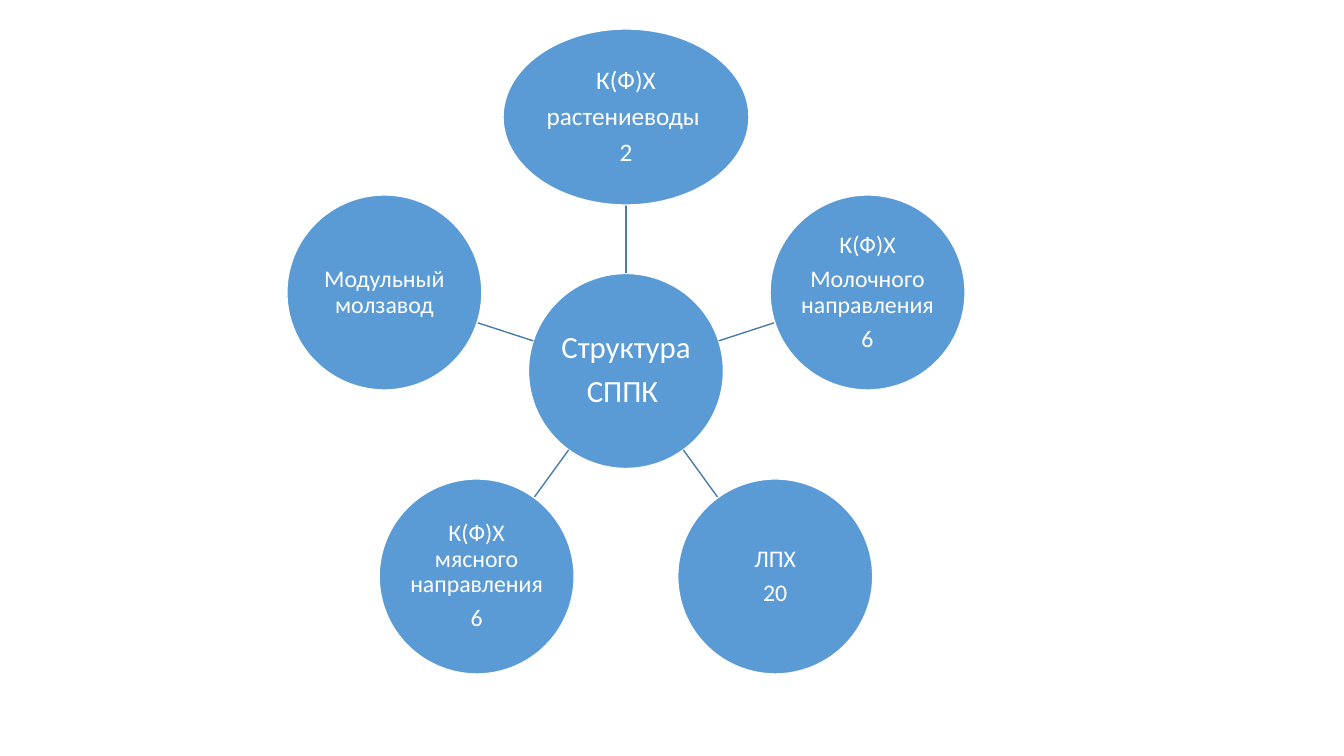
import math
from pptx import Presentation
from pptx import util as u
from pptx.dml.color import RGBColor
from pptx.enum import shapes, text
from pptx.oxml.ns import qn
from lxml import etree

# Content: each bubble is (paragraphs, font size, width, height)
HUB = (["Структура", "СППК "], 22, 195, 195)
NODES = [  # clockwise from the top
    (["К(Ф)Х", "растениеводы ", "2"], 18, 246, 176),
    (["К(Ф)Х", "Молочного направления", "6"], 17, 195, 195),
    (["ЛПХ", "20"], 17, 195, 195),
    (["К(Ф)Х мясного направления", "6"], 17, 195, 195),
    (["Модульный молзавод"], 17, 195, 195),
]
CX, CY, ORBIT = 626, 371, 254
FONT = "Calibri"
BLUE = RGBColor(0x5B, 0x9B, 0xD5)
STEEL = RGBColor(0x49, 0x7C, 0xAB)
WHITE = RGBColor(0xFF, 0xFF, 0xFF)


def px(n):
    return u.Emu(round(n * 914400 / 100.8))


def bubble(slide, x, y, node, inset):
    lines, size, w, h = node
    oval = slide.shapes.add_shape(shapes.MSO_SHAPE.OVAL, px(x - w / 2),
                                  px(y - h / 2), px(w), px(h))
    oval.shadow.inherit = False
    oval.fill.solid()
    oval.fill.fore_color.rgb = BLUE
    oval.line.color.rgb = WHITE
    oval.line.width = u.Pt(1)
    frame = oval.text_frame
    frame.word_wrap = True
    frame.vertical_anchor = text.MSO_ANCHOR.MIDDLE
    frame.margin_left = frame.margin_right = px(inset)
    frame.margin_top = frame.margin_bottom = px(inset)
    for i, line in enumerate(lines):
        para = frame.add_paragraph() if i else frame.paragraphs[0]
        para.alignment = text.PP_ALIGN.CENTER
        para.line_spacing = 0.9
        para.space_after = u.Pt(round(size * 0.35, 1))
        run = para.add_run()
        run.text = line
        run.font.name = FONT
        run.font.size = u.Pt(size)
        run.font.color.rgb = WHITE


def spoke(slide, dx, dy, start, end):
    line = slide.shapes.add_connector(
        shapes.MSO_CONNECTOR.STRAIGHT,
        px(CX + start * dx), px(CY + start * dy),
        px(CX + end * dx), px(CY + end * dy))
    line.line.color.rgb = STEEL
    line.line.width = u.Pt(1)
    etree.SubElement(line._element.spPr, qn("a:effectLst"))


def main():
    deck = Presentation()
    deck.slide_width, deck.slide_height = px(1344), px(756)
    slide = deck.slides.add_slide(deck.slide_layouts[6])

    # Hub
    bubble(slide, CX, CY, HUB, 2)

    # Spokes and outer bubbles, evenly spread round the hub
    for i, node in enumerate(NODES):
        turn = 2 * math.pi * i / len(NODES)
        dx, dy = math.sin(turn), -math.cos(turn)
        rx, ry = node[2] / 2, node[3] / 2
        reach = 1 / math.hypot(dx / rx, dy / ry)
        spoke(slide, dx, dy, HUB[2] / 2, ORBIT - reach)
        bubble(slide, CX + ORBIT * dx, CY + ORBIT * dy, node, 1)

    deck.save("out.pptx")


if __name__ == "__main__":
    main()
